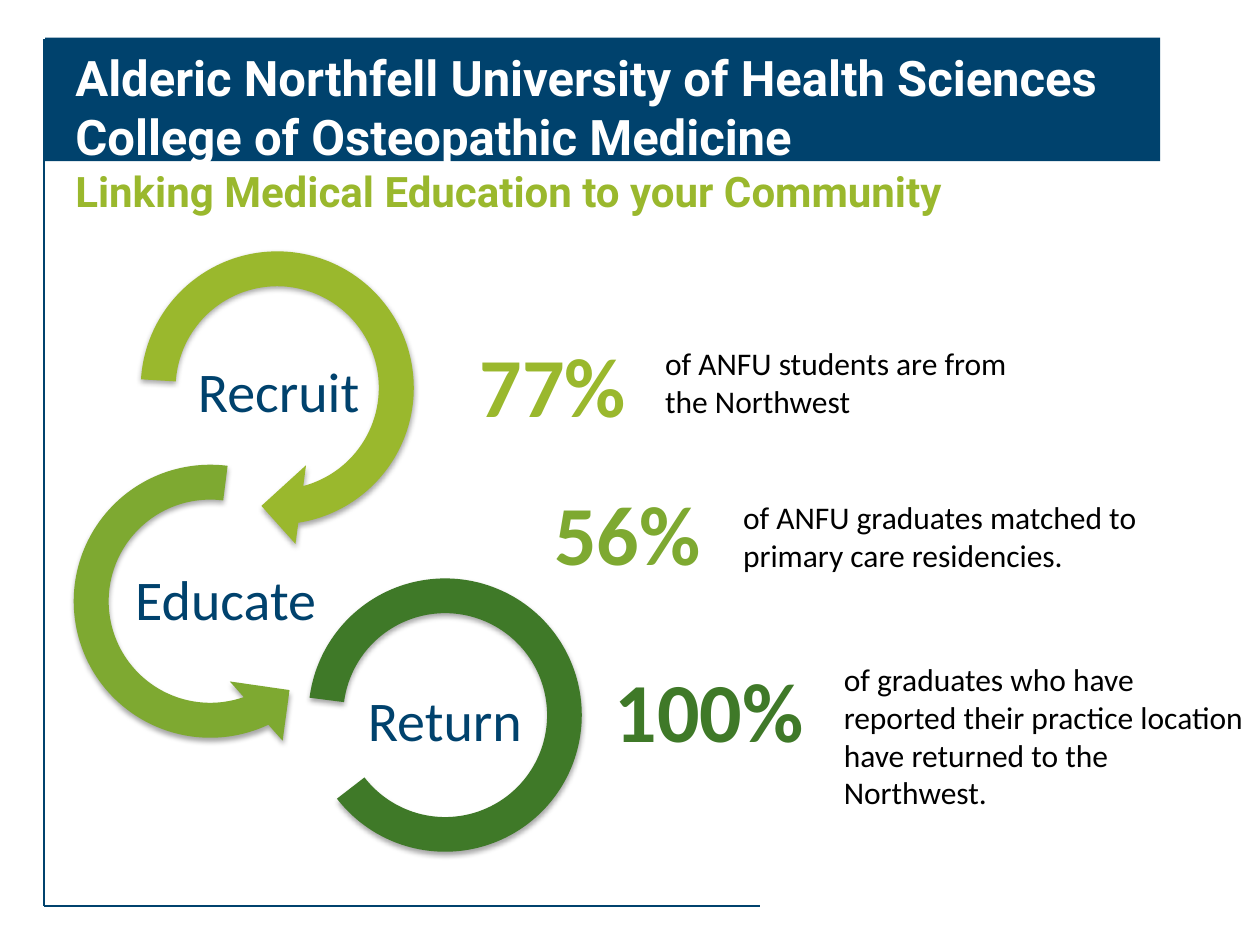
from dataclasses import dataclass

from lxml import etree
from pptx import Presentation
from pptx.dml.color import RGBColor
from pptx.enum.shapes import MSO_CONNECTOR, MSO_SHAPE
from pptx.enum.text import MSO_ANCHOR, MSO_AUTO_SIZE, PP_ALIGN
from pptx.oxml import parse_xml
from pptx.oxml.ns import nsdecls, qn
from pptx.util import Cm, Pt

RECT = MSO_SHAPE.RECTANGLE
ARROW = MSO_SHAPE.CIRCULAR_ARROW
LEFT_ARROW = MSO_SHAPE.LEFT_CIRCULAR_ARROW
ARC = MSO_SHAPE.BLOCK_ARC
STRAIGHT = MSO_CONNECTOR.STRAIGHT
MIDDLE = MSO_ANCHOR.MIDDLE
CENTER = PP_ALIGN.CENTER
GROW = MSO_AUTO_SIZE.SHAPE_TO_FIT_TEXT
FIXED = MSO_AUTO_SIZE.NONE

NAVY, WHITE, BLACK = "00426D", "FFFFFF", "000000"
LIME, GREEN, FOREST = "9AB82D", "7EA931", "3F7928"

Box = tuple[float, float, float, float]  # left, top, width, height in cm


@dataclass
class Line:
    text: str
    size: float
    color: str
    font: str = "Calibri"
    bold: bool = False


@dataclass
class Stage:
    """One ring of the cycle with its label and its figure."""
    kind: int
    color: str
    ring: Box
    rotation: float
    adjustments: tuple[float, ...]
    label: str
    label_box: Box
    percent: str
    percent_box: Box
    note: str
    note_box: Box


STAGES = [
    Stage(ARROW, LIME, (2.39, 4.62, 6.4, 6.4), 3.6,
          (0.11, 11.42, 45, 108, 0.125),
          "Recruit", (3.84, 7.06, 3.56, 1.78),
          "77%", (9.42, 6.6, 4.5, 2.31),
          "of ANFU students are from the Northwest",
          (13.16, 6.81, 8.2, 1.8)),
    Stage(LEFT_ARROW, GREEN, (1.04, 8.92, 6.4, 6.4), 322.3,
          (0.11, 11.42, 63, 189, 0.125),
          "Educate", (2.29, 11.25, 4.52, 1.78),
          "56%", (10.92, 9.58, 4.5, 2.31),
          "of ANFU graduates matched to primary care residencies.",
          (14.73, 9.91, 9.35, 1.8)),
    Stage(ARC, FOREST, (6.22, 11.66, 5.51, 5.51), 322.3,
          (135, 108, 0.127),
          "Return", (7.19, 13.69, 3.56, 1.78),
          "100%", (12.14, 13.16, 5.26, 2.31),
          "of graduates who have reported their practice location "
          "have returned to the Northwest.",
          (16.76, 13.18, 8.64, 2.57)),
]


def rgb(color: str) -> RGBColor:
    return RGBColor.from_string(color)


def add_rule(s, x1: float, y1: float, x2: float, y2: float) -> None:
    sp = s.shapes.add_connector(STRAIGHT, Cm(x1), Cm(y1), Cm(x2), Cm(y2))
    sp.line.color.rgb = rgb(NAVY)
    sp.line.width = Pt(1)
    etree.SubElement(sp._element.spPr, qn("a:effectLst"))


def add_solid(s, kind: int, box: Box, color: str):
    sp = s.shapes.add_shape(kind, *map(Cm, box))
    sp.shadow.inherit = False
    sp.fill.solid()
    sp.fill.fore_color.rgb = rgb(color)
    sp.line.fill.background()
    return sp


def add_ring(s, stage: Stage) -> None:
    sp = add_solid(s, stage.kind, stage.ring, stage.color)
    sp.rotation = stage.rotation
    for i, value in enumerate(stage.adjustments):
        sp.adjustments[i] = value
    effects = sp._element.spPr.find(qn("a:effectLst"))
    effects.append(parse_xml(
        f'<a:outerShdw {nsdecls("a")} blurRad="40000" dist="23000" '
        'dir="5400000" rotWithShape="0"><a:srgbClr val="000000">'
        '<a:alpha val="35000"/></a:srgbClr></a:outerShdw>'))


def add_text(s, box: Box, *lines: Line):
    tf = s.shapes.add_textbox(*map(Cm, box)).text_frame
    tf.word_wrap = True
    tf.auto_size = GROW
    tf.text = "\n".join(line.text for line in lines)
    for p, line in zip(tf.paragraphs, lines):
        for r in p.runs:
            r.font.name = line.font
            r.font.size = Pt(line.size)
            r.font.bold = line.bold
            r.font.color.rgb = rgb(line.color)
    return tf


def add_label(s, stage: Stage) -> None:
    tf = add_text(s, stage.label_box, Line(stage.label, 32, NAVY))
    tf.auto_size = FIXED
    tf.vertical_anchor = MIDDLE
    tf.margin_left = tf.margin_right = Cm(0.05)
    tf.margin_top = tf.margin_bottom = Cm(0.05)
    tf.paragraphs[0].alignment = CENTER
    tf.paragraphs[0].line_spacing = 0.9


def main() -> None:
    prs = Presentation()
    prs.slide_width, prs.slide_height = Cm(25.4), Cm(19.05)
    s = prs.slides.add_slide(prs.slide_layouts[6])

    # Frame and title band
    add_rule(s, 15.32, 18.26, 0.89, 18.26)
    add_rule(s, 0.89, 0.79, 0.89, 18.26)
    add_solid(s, RECT, (0.91, 0.76, 22.48, 2.49), NAVY)

    # Cycle
    for stage in STAGES:
        add_ring(s, stage)
        add_label(s, stage)

    # Title and subtitle
    add_text(s, (1.27, 0.84, 21.77, 5.46),
             Line("Alderic Northfell University of Health Sciences "
                  "College of Osteopathic Medicine", 28, WHITE, "Roboto", True),
             Line("Linking Medical Education to your Community",
                  24, LIME, "Roboto", True))

    # Figures
    for stage in STAGES:
        add_text(s, stage.note_box, Line(stage.note, 18, BLACK))
        add_text(s, stage.percent_box,
                 Line(stage.percent, 48, stage.color, bold=True))

    prs.save("out.pptx")


if __name__ == "__main__":
    main()
